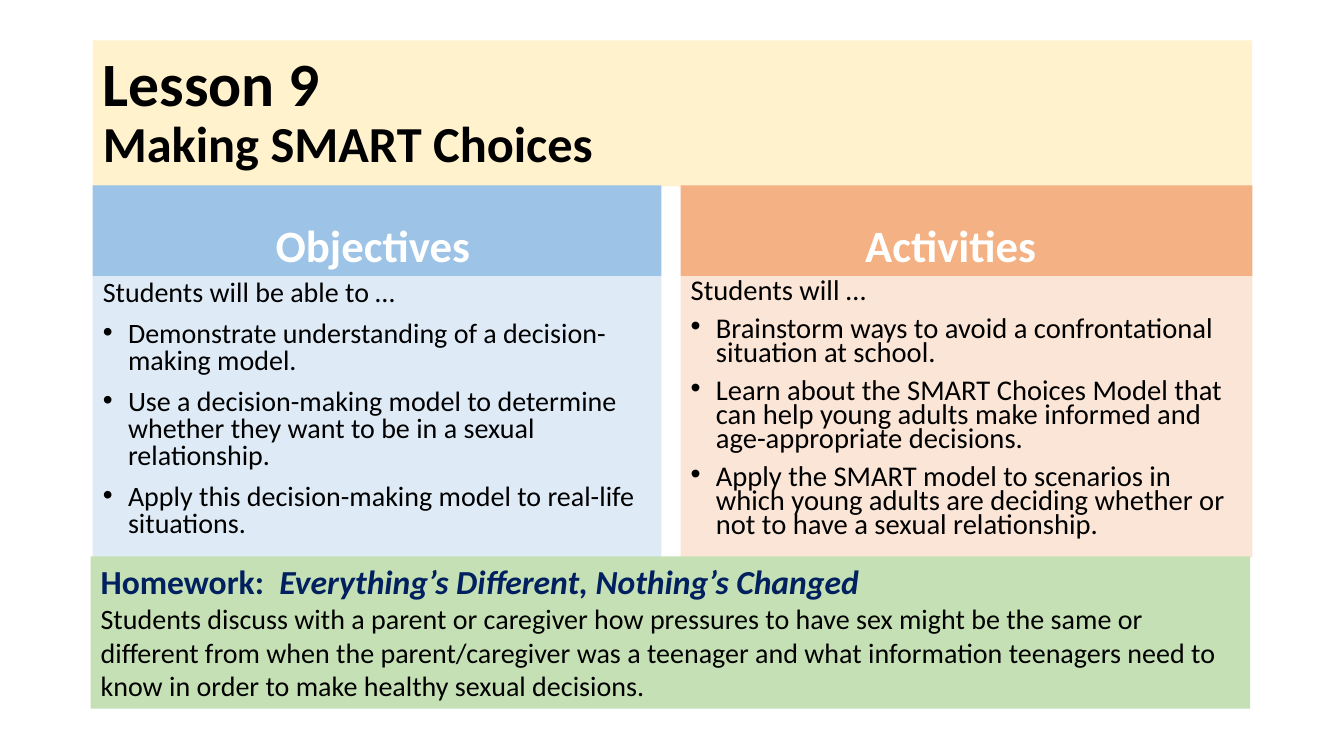
from lxml import etree
from pptx import Presentation
from pptx import util as u
from pptx.dml.color import RGBColor
from pptx.enum import text
from pptx.oxml.ns import qn


def rgb(code):
    return RGBColor.from_string(code)


class Lesson:
    font = "Calibri"
    black, white, navy = "000000", "FFFFFF", "002060"

    def __init__(self, prs):
        self.prs = prs
        self.slide = prs.slides.add_slide(prs.slide_layouts[4])

    def box(self, area):
        left, top, width, height = area
        w, h = self.prs.slide_width / 100, self.prs.slide_height / 100
        return int(left * w), int(top * h), int(width * w), int(height * h)

    def panel(self, sp, area, fill, anchor):
        sp.left, sp.top, sp.width, sp.height = self.box(area)
        sp.fill.solid()
        sp.fill.fore_color.rgb = rgb(fill)
        tf = sp.text_frame
        tf.word_wrap = True
        tf.auto_size = text.MSO_AUTO_SIZE.NONE
        tf.vertical_anchor = anchor
        return tf

    def placeholder(self, idx, area, fill, anchor):
        sp = next(s for s in self.slide.placeholders
                  if s.placeholder_format.idx == idx)
        return self.panel(sp, area, fill, anchor)

    def style(self, r, size, color, bold=False, italic=False):
        r.font.name = self.font
        r.font.size = u.Pt(size)
        r.font.bold = bold
        r.font.italic = italic
        r.font.color.rgb = rgb(color)

    def spacing(self, p, align, line=1.0, before=0):
        p.alignment = align
        p.line_spacing = line
        p.space_before = u.Pt(before)

    def title(self, words, area, fill, sizes):
        tf = self.placeholder(0, area, fill, text.MSO_ANCHOR.MIDDLE)
        tf.text = words
        p = tf.paragraphs[0]
        self.spacing(p, text.PP_ALIGN.LEFT, 0.9)
        for r, size in zip(p.runs, sizes):
            self.style(r, size, self.black, bold=True)

    def heading(self, idx, words, area, fill, inset):
        tf = self.placeholder(idx, area, fill, text.MSO_ANCHOR.BOTTOM)
        tf.margin_right = u.Inches(inset)
        tf.text = words
        p = tf.paragraphs[0]
        self.spacing(p, text.PP_ALIGN.CENTER)
        self.style(p.runs[0], 32, self.white, bold=True)

    def points(self, idx, lines, area, fill, size, line):
        tf = self.placeholder(idx, area, fill, text.MSO_ANCHOR.TOP)
        tf.text = "\n".join(lines)
        for i, p in enumerate(tf.paragraphs):
            self.spacing(p, text.PP_ALIGN.LEFT, line, 10)
            self.style(p.runs[0], size, self.black)
            self.bullet(p, i > 0)

    def bullet(self, p, shown):
        pPr = p._p.get_or_add_pPr()
        indent = u.Inches(0.25) if shown else 0
        pPr.set("marL", str(indent))
        pPr.set("indent", str(-indent))
        if shown:
            etree.SubElement(pPr, qn("a:buFont")).set("typeface", "Arial")
            etree.SubElement(pPr, qn("a:buChar")).set("char", "•")
        else:
            etree.SubElement(pPr, qn("a:buNone"))

    def homework(self, label, name, task, area, fill):
        sp = self.slide.shapes.add_textbox(*self.box(area))
        tf = self.panel(sp, area, fill, text.MSO_ANCHOR.TOP)
        tf.text = label
        p = tf.paragraphs[0]
        self.style(p.runs[0], 24, self.navy, bold=True)
        r = p.add_run()
        r.text = name
        self.style(r, 24, self.navy, bold=True, italic=True)
        p = tf.add_paragraph()
        p.text = task
        self.style(p.runs[0], 20, self.black)


def main():
    prs = Presentation()
    prs.slide_width, prs.slide_height = u.Inches(13.33), u.Inches(7.5)
    lesson = Lesson(prs)
    lesson.title("Lesson 9\vMaking SMART Choices",
                 (6.9, 5.33, 86.27, 19.33), "FFF2CC", (44, 36))

    columns = [
        (1, "Objectives", 6.9, 42.31, "9DC3E6", "DEEBF7", 0.18, 20, 0.8, [
            "Students will be able to …",
            "Demonstrate understanding of a decision-making model.",
            "Use a decision-making model to determine whether they want "
            "to be in a sexual relationship.",
            "Apply this decision-making model to real-life situations."]),
        (3, "Activities", 50.64, 42.54, "F4B183", "FBE5D6", 0.41, 20.4, 0.7, [
            "Students will …",
            "Brainstorm ways to avoid a confrontational situation at school.",
            "Learn about the SMART Choices Model that can help young adults "
            "make informed and age-appropriate decisions.",
            "Apply the SMART model to scenarios in which young adults are "
            "deciding whether or not to have a sexual relationship."]),
    ]
    for idx, name, left, width, dark, light, inset, size, line, lines in columns:
        lesson.heading(idx, name, (left, 24.53, width, 12), dark, inset)
        lesson.points(idx + 1, lines, (left, 36.53, width, 37.2),
                      light, size, line)

    lesson.homework(
        "Homework:  ", "Everything’s Different, Nothing’s Changed",
        "Students discuss with a parent or caregiver how pressures to have sex "
        "might be the same or different from when the parent/caregiver was a "
        "teenager and what information teenagers need to know in order to make "
        "healthy sexual decisions.",
        (6.75, 73.6, 86.27, 20.13), "C5E0B4")
    prs.save("out.pptx")


if __name__ == "__main__":
    main()
